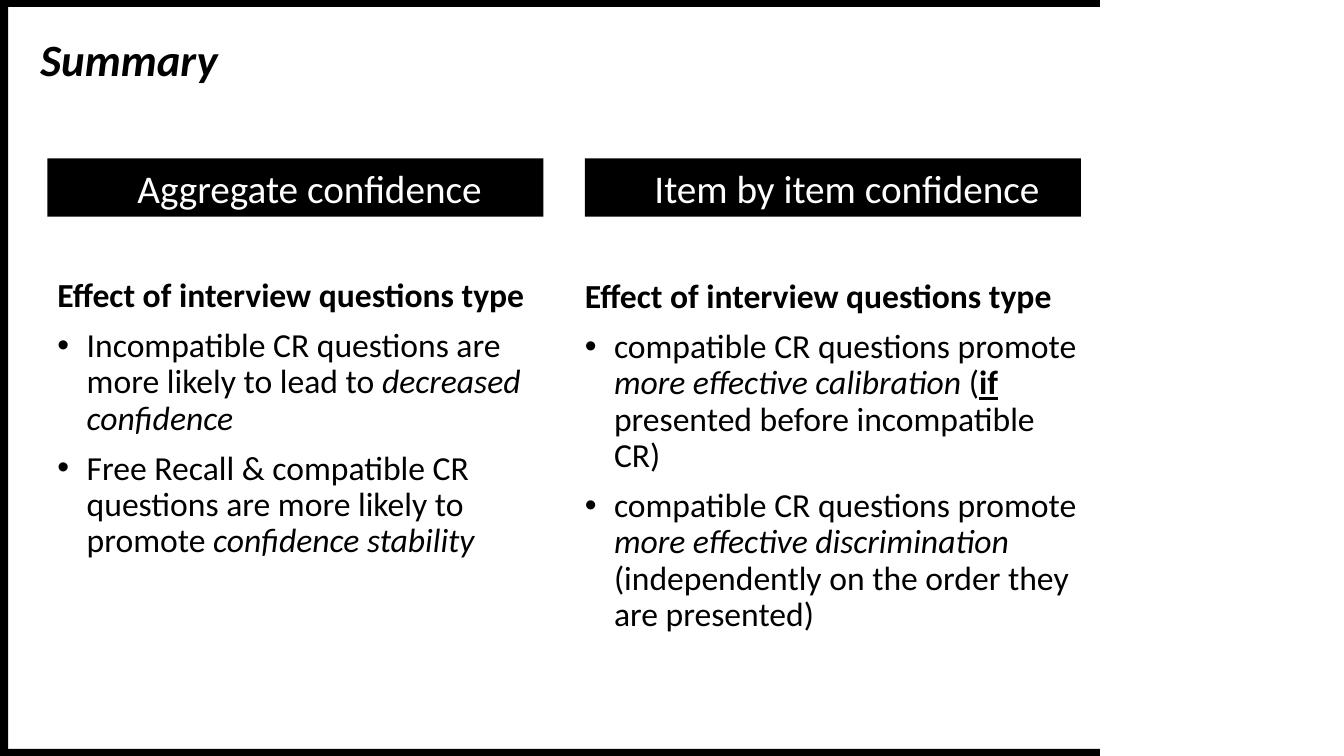
from lxml import etree
from pptx import Presentation
from pptx.dml.color import RGBColor
from pptx.enum.shapes import MSO_SHAPE
from pptx.enum.text import MSO_ANCHOR, MSO_AUTO_SIZE, PP_ALIGN
from pptx.oxml.ns import qn
from pptx.util import Inches, Pt

BLACK = RGBColor(0, 0, 0)
WHITE = RGBColor(255, 255, 255)
RECTANGLE = MSO_SHAPE.RECTANGLE
MIDDLE = MSO_ANCHOR.MIDDLE
TOP = MSO_ANCHOR.TOP
LEFT = PP_ALIGN.LEFT
CENTER = PP_ALIGN.CENTER
NO_AUTOFIT = MSO_AUTO_SIZE.NONE

COMPARISON_LAYOUT = 4
COLUMN_WIDTH = 4.92
BULLET_INDENT = 0.29


def add_text(paragraph, text, size=24, color=BLACK, bold=False, italic=False, underline=False):
    run = paragraph.add_run()
    run.text = text
    font = run.font
    font.name = "Calibri"
    font.size = Pt(size)
    font.color.rgb = color
    font.bold, font.italic, font.underline = bold, italic, underline


def place(shape, box, insets, anchor):
    """Set the box and the text insets (left, top, right, bottom), in inches."""
    shape.left, shape.top, shape.width, shape.height = map(Inches, box)
    frame = shape.text_frame
    frame.word_wrap = True
    frame.auto_size = NO_AUTOFIT
    frame.vertical_anchor = anchor
    (frame.margin_left, frame.margin_top,
     frame.margin_right, frame.margin_bottom) = map(Inches, insets)
    return frame


presentation = Presentation()
presentation.slide_width = Inches(13.33)
presentation.slide_height = Inches(7.5)
slide = presentation.slides.add_slide(presentation.slide_layouts[COMPARISON_LAYOUT])
placeholders = {shape.placeholder_format.idx: shape for shape in slide.placeholders}

# Frame along the bottom, top and left edges
for box in [(0, 7.43, 10.91, 0.07), (0, 0, 10.91, 0.07), (0, 0.03, 0.08, 7.47)]:
    edge = slide.shapes.add_shape(RECTANGLE, *map(Inches, box))
    edge.shadow.inherit = False
    edge.fill.solid()
    edge.fill.fore_color.rgb = BLACK
    edge.line.fill.background()

# Title
title_frame = place(slide.shapes.title, (0.3, 0.26, 7.96, 0.64), (0.1, 0.05, 0.1, 0.05), TOP)
title_frame.paragraphs[0].alignment = LEFT
add_text(title_frame.paragraphs[0], "Summary", size=32, bold=True, italic=True)

# Two columns: heading bar above a list
columns = [
    {
        "heading": "Aggregate confidence", "left": 0.47, "list_top": 2.21,
        "insets": (0.1, 0.55, 0.1, 0.05),
        "bullets": [
            [("Incompatible CR questions are more likely to lead to ", {}),
             ("decreased confidence", {"italic": True})],
            [("Free Recall & compatible CR questions are more likely to promote ", {}),
             ("confidence stability", {"italic": True})],
        ],
    },
    {
        "heading": "Item by item confidence", "left": 5.8, "list_top": 2.27,
        "insets": (0, 0.5, 0, 0),
        "bullets": [
            [("compatible CR questions promote ", {}),
             ("more effective calibration ", {"italic": True}),
             ("(", {}),
             ("if", {"bold": True, "underline": True}),
             (" presented before incompatible CR)", {})],
            [("compatible CR questions promote ", {}),
             ("more effective discrimination ", {"italic": True}),
             ("(independently on the order they are presented)", {})],
        ],
    },
]

for number, column in enumerate(columns):
    heading_bar = placeholders[1 + 2 * number]
    heading_bar.fill.solid()
    heading_bar.fill.fore_color.rgb = BLACK
    bar_frame = place(heading_bar, (column["left"], 1.57, COLUMN_WIDTH, 0.58),
                      (0.28, 0, 0, 0), MIDDLE)
    bar_paragraph = bar_frame.paragraphs[0]
    bar_paragraph.alignment = CENTER
    bar_paragraph.space_before = Pt(0)
    add_text(bar_paragraph, column["heading"], size=28, color=WHITE)

    list_frame = place(placeholders[2 + 2 * number],
                       (column["left"], column["list_top"], COLUMN_WIDTH, 4.56),
                       column["insets"], TOP)
    subheading = list_frame.paragraphs[0]
    subheading.line_spacing = 0.9
    subheading.space_before = Pt(0)
    properties = subheading._p.get_or_add_pPr()
    properties.set("marL", "0")
    properties.set("indent", "0")
    etree.SubElement(properties, qn("a:buNone"))
    add_text(subheading, "Effect of interview questions type", bold=True)

    for runs in column["bullets"]:
        paragraph = list_frame.add_paragraph()
        paragraph.line_spacing = 0.9
        paragraph.space_before = Pt(10)
        properties = paragraph._p.get_or_add_pPr()
        properties.set("marL", str(Inches(BULLET_INDENT)))
        properties.set("indent", str(-Inches(BULLET_INDENT)))
        etree.SubElement(properties, qn("a:buChar")).set("char", "•")
        for text, text_format in runs:
            add_text(paragraph, text, **text_format)

presentation.save("out.pptx")
